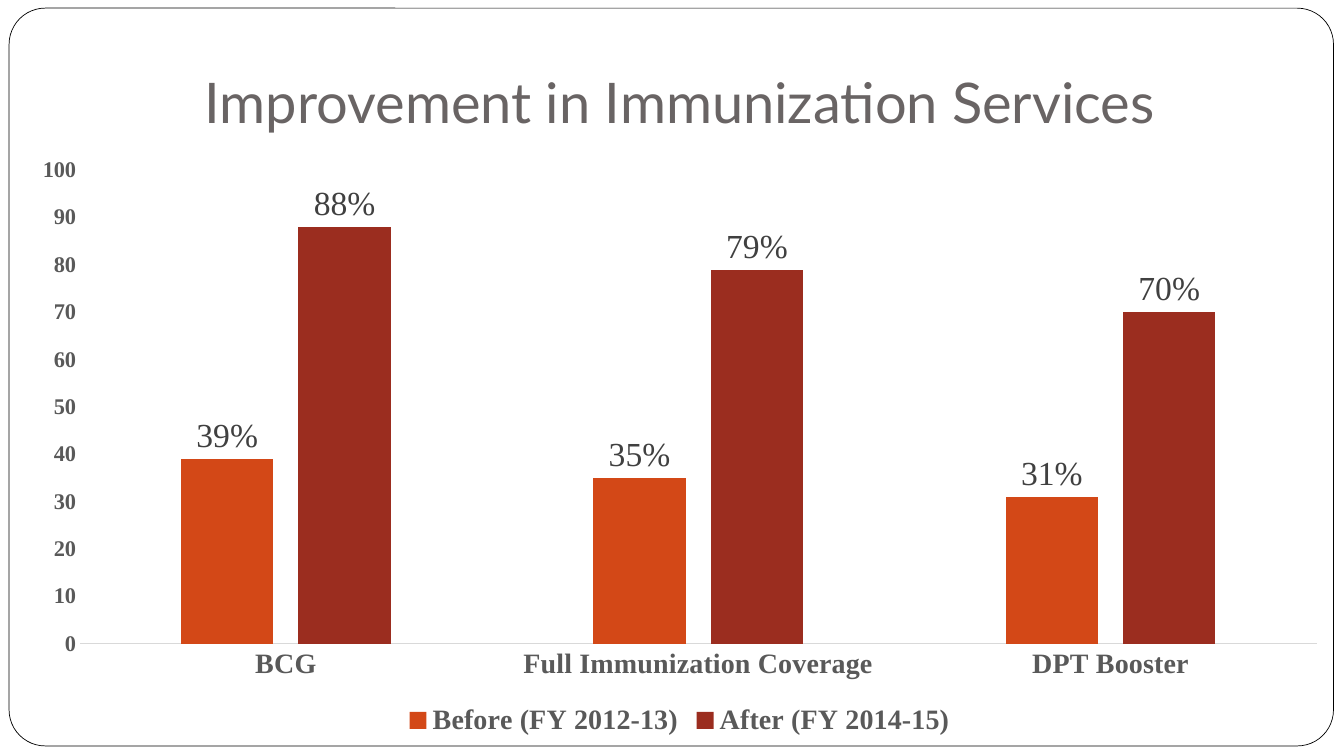
from dataclasses import dataclass

from lxml import etree
from pptx import Presentation
from pptx.chart.data import CategoryChartData
from pptx.dml.color import RGBColor
from pptx.enum.chart import XL_CHART_TYPE as ChartType
from pptx.enum.chart import XL_LABEL_POSITION as LabelPos
from pptx.enum.chart import XL_LEGEND_POSITION as LegendPos
from pptx.enum.chart import XL_TICK_MARK as TickMark
from pptx.enum.shapes import MSO_SHAPE as Shape
from pptx.enum.text import MSO_ANCHOR as Anchor
from pptx.enum.text import PP_ALIGN as Align
from pptx.oxml.ns import qn
from pptx.util import Pt


@dataclass(frozen=True)
class Theme:
    title_font: str = "Lato"
    chart_font: str = "Times New Roman"
    title_size: int = 40
    label_size: int = 24
    category_size: int = 20
    value_size: int = 16
    paper: str = "FFFFFF"
    frame: str = "000000"
    title: str = "696464"
    axis_text: str = "595959"
    axis_line: str = "D9D9D9"
    label: str = "404040"
    before: str = "D34817"
    after: str = "9B2D1F"


THEME = Theme()
CATEGORIES = ["BCG", "Full Immunization Coverage", "DPT Booster"]
SERIES = [
    ("Before (FY 2012-13)", (39, 35, 31), THEME.before),
    ("After (FY 2014-15)", (88, 79, 70), THEME.after),
]
# Inner plot area as fractions of the chart
PLOT_AREA = {"x": 0.048, "y": 0.042, "w": 0.932, "h": 0.794}


def rgb(value):
    return RGBColor.from_string(value)


def style_font(font, name, size, color, bold=False):
    font.name = name
    font.size = Pt(size)
    font.bold = bold
    font.color.rgb = rgb(color)


def add_frame(slide):
    """Put the rounded border behind everything else."""
    sp = slide.shapes.add_shape(Shape.ROUNDED_RECTANGLE, Pt(6.5), Pt(5.8), Pt(946), Pt(527))
    sp.adjustments[0] = 0.049
    sp.shadow.inherit = False
    sp.fill.solid()
    sp.fill.fore_color.rgb = rgb(THEME.paper)
    sp.line.color.rgb = rgb(THEME.frame)
    sp.line.width = Pt(0.5)
    slide.shapes._spTree.insert(2, sp._element)


def set_title(slide, text):
    sp = slide.shapes.title
    sp.left, sp.top, sp.width, sp.height = Pt(11.5), Pt(9.4), Pt(948), Pt(94.3)
    tf = sp.text_frame
    tf.text = text
    tf.word_wrap = True
    tf.vertical_anchor = Anchor.BOTTOM
    tf.margin_left = tf.margin_right = tf.margin_bottom = Pt(7.2)
    tf.margin_top = Pt(3.6)
    p = tf.paragraphs[0]
    p.alignment = Align.CENTER
    style_font(p.runs[0].font, THEME.title_font, THEME.title_size, THEME.title)


def style_axis(axis, size):
    axis.has_major_gridlines = False
    axis.major_tick_mark = axis.minor_tick_mark = TickMark.NONE
    style_font(axis.tick_labels.font, THEME.chart_font, size, THEME.axis_text, True)


def style_series(series, color):
    series.format.fill.solid()
    series.format.fill.fore_color.rgb = rgb(color)
    labels = series.data_labels
    labels.show_value = True
    labels.number_format = '0"%"'
    labels.number_format_is_linked = False
    labels.position = LabelPos.OUTSIDE_END
    style_font(labels.font, THEME.chart_font, THEME.label_size, THEME.label)


def fix_plot_area(chart):
    area = chart._chartSpace.chart.plotArea
    for old in area.findall(qn("c:layout")):
        area.remove(old)
    layout = etree.Element(qn("c:layout"))
    manual = etree.SubElement(layout, qn("c:manualLayout"))
    settings = [("layoutTarget", "inner"), ("xMode", "edge"), ("yMode", "edge")]
    for tag, value in settings + list(PLOT_AREA.items()):
        etree.SubElement(manual, qn(f"c:{tag}")).set("val", str(value))
    area.insert(0, layout)


def add_coverage_chart(slide):
    data = CategoryChartData()
    data.categories = CATEGORIES
    for name, values, _ in SERIES:
        data.add_series(name, values)
    chart = slide.shapes.add_chart(
        ChartType.COLUMN_CLUSTERED, Pt(11.5), Pt(103.7), Pt(948), Pt(426.2), data
    ).chart
    chart.has_title = False
    chart.font.name = THEME.chart_font

    plot = chart.plots[0]
    plot.gap_width = 219
    plot.overlap = -27
    plot.vary_by_categories = False
    for series, (_, _, color) in zip(plot.series, SERIES):
        style_series(series, color)

    style_axis(chart.category_axis, THEME.category_size)
    line = chart.category_axis.format.line
    line.color.rgb = rgb(THEME.axis_line)
    line.width = Pt(0.75)

    axis = chart.value_axis
    style_axis(axis, THEME.value_size)
    axis.minimum_scale, axis.maximum_scale, axis.major_unit = 0, 100, 10
    axis.format.line.fill.background()

    chart.has_legend = True
    chart.legend.position = LegendPos.BOTTOM
    chart.legend.include_in_layout = False
    style_font(chart.legend.font, THEME.chart_font, THEME.category_size, THEME.axis_text, True)
    fix_plot_area(chart)


def main():
    prs = Presentation()
    prs.slide_width, prs.slide_height = Pt(960), Pt(540)
    slide = prs.slides.add_slide(prs.slide_layouts[5])
    add_frame(slide)
    set_title(slide, "Improvement in Immunization Services")
    add_coverage_chart(slide)
    prs.save("out.pptx")


if __name__ == "__main__":
    main()
